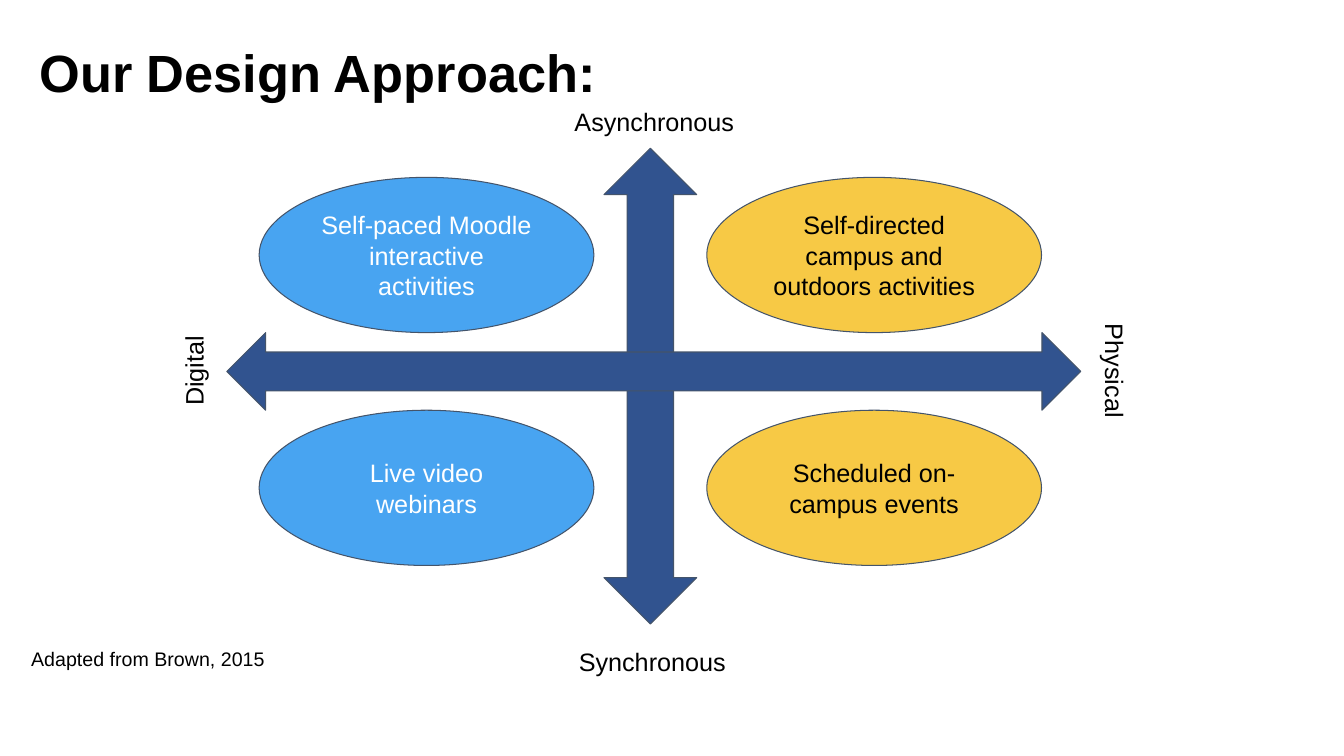
from pptx import Presentation
from pptx.dml.color import RGBColor
from pptx.enum.shapes import MSO_SHAPE
from pptx.enum.text import MSO_ANCHOR, MSO_AUTO_SIZE, PP_ALIGN
from pptx.util import Inches, Pt

ELLIPSE = MSO_SHAPE.OVAL
VERTICAL_ARROW = MSO_SHAPE.UP_DOWN_ARROW
HORIZONTAL_ARROW = MSO_SHAPE.LEFT_RIGHT_ARROW
TOP, MIDDLE = MSO_ANCHOR.TOP, MSO_ANCHOR.MIDDLE
LEFT, CENTER = PP_ALIGN.LEFT, PP_ALIGN.CENTER
NO_AUTOFIT, GROW = MSO_AUTO_SIZE.NONE, MSO_AUTO_SIZE.SHAPE_TO_FIT_TEXT

FONT = "Arial"
BLACK, WHITE = "000000", "FFFFFF"
BLUE, YELLOW, NAVY, OUTLINE = "48A4F1", "F7C945", "31538F", "44546A"

DIGITAL_X, PHYSICAL_X = 2.57, 7.01
ASYNC_Y, SYNC_Y = 1.76, 4.07
ACTIVITIES = [
    ("Self-paced Moodle interactive activities", DIGITAL_X, ASYNC_Y, BLUE, WHITE),
    ("Live video webinars", DIGITAL_X, SYNC_Y, BLUE, WHITE),
    ("Self-directed campus and outdoors activities", PHYSICAL_X, ASYNC_Y, YELLOW, BLACK),
    ("Scheduled on-campus events", PHYSICAL_X, SYNC_Y, YELLOW, BLACK),
]
ARROWS = [
    (VERTICAL_ARROW, (5.99, 1.47, 0.92, 4.72)),
    (HORIZONTAL_ARROW, (2.25, 3.3, 8.47, 0.77)),
]
AXIS_LABELS = [
    ("Asynchronous", (4.87, 0.96, 3.24, 0.5), 0),
    ("Synchronous", (4.85, 6.31, 3.24, 0.5), 0),
    ("Digital", (0.49, 3.43, 2.86, 0.5), 270),
    ("Physical", (9.63, 3.43, 2.86, 0.5), 90),
]


def color(hex_string):
    """Turn a hex string into a colour."""
    return RGBColor.from_string(hex_string)


def write(shape, text, size=18, ink=BLACK, align=CENTER, anchor=TOP, bold=False):
    """Put one formatted paragraph into a shape and return it."""
    frame = shape.text_frame
    frame.word_wrap = True
    frame.vertical_anchor = anchor
    frame.margin_left = frame.margin_right = Inches(0.1)
    frame.margin_top = frame.margin_bottom = Inches(0.1)
    para = frame.paragraphs[0]
    para.alignment = align
    span = para.add_run()
    span.text = text
    span.font.name = FONT
    span.font.size = Pt(size)
    span.font.bold = bold
    span.font.color.rgb = color(ink)
    return para


def add_title(page, text):
    """Place and format the title placeholder."""
    title = page.shapes.title
    title.left, title.top = Inches(0.29), Inches(0.45)
    title.width, title.height = Inches(11.14), Inches(1.02)
    para = write(title, text, size=37.4, align=LEFT, bold=True)
    para.line_spacing = 0.7
    title.text_frame.margin_top = Inches(0.12)
    title.text_frame.auto_size = NO_AUTOFIT


def add_figure(page, kind, bounds, fill):
    """Add a filled and outlined preset shape."""
    figure = page.shapes.add_shape(kind, *map(Inches, bounds))
    figure.shadow.inherit = False
    figure.fill.solid()
    figure.fill.fore_color.rgb = color(fill)
    figure.line.color.rgb = color(OUTLINE)
    figure.line.width = Pt(0.75)
    return figure


def add_label(page, text, bounds, rotation=0, size=18, align=CENTER):
    """Add a text box, turned if needed."""
    box = page.shapes.add_textbox(*map(Inches, bounds))
    box.rotation = rotation
    write(box, text, size=size, align=align)
    box.text_frame.auto_size = GROW


def main():
    """Build the slide and save the deck."""
    deck = Presentation()
    deck.slide_width, deck.slide_height = Inches(13.33), Inches(7.5)
    page = deck.slides.add_slide(deck.slide_layouts[5])
    add_title(page, "Our Design Approach:")
    for kind, bounds in ARROWS:
        add_figure(page, kind, bounds, NAVY)
    for text, left, top, fill, ink in ACTIVITIES:
        ellipse = add_figure(page, ELLIPSE, (left, top, 3.32, 1.54), fill)
        write(ellipse, text, ink=ink, anchor=MIDDLE)
    for text, bounds, rotation in AXIS_LABELS:
        add_label(page, text, bounds, rotation)
    add_label(page, "Adapted from Brown, 2015", (0.21, 6.32, 2.59, 0.44), size=14, align=LEFT)
    deck.save("out.pptx")


if __name__ == "__main__":
    main()
